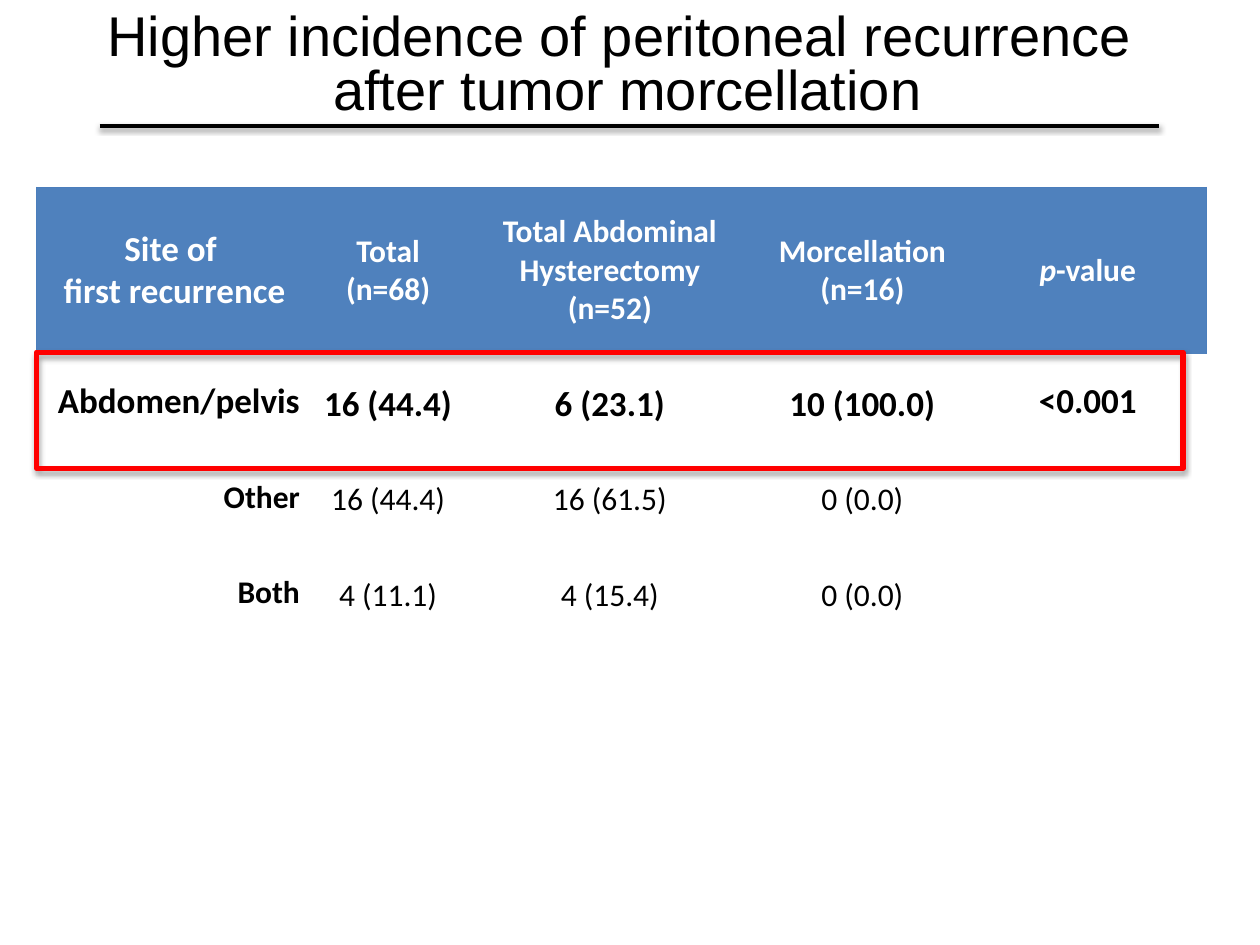
import pptx
import pptx.util
import pptx.dml.color
import pptx.enum.shapes
import pptx.enum.text
import pptx.oxml
import pptx.oxml.ns

Cm, Pt = pptx.util.Cm, pptx.util.Pt
ALIGN = pptx.enum.text.PP_ALIGN
MIDDLE = pptx.enum.text.MSO_ANCHOR.MIDDLE
COLORS = {"ink": "000000", "paper": "FFFFFF", "head": "4F81BD",
          "edge": "4B7EBC", "mark": "FF0000"}
PLAIN = "{2D5ABB26-0587-4C30-8999-92F81FD0307C}"
NS = pptx.oxml.ns.nsdecls("a")

HEAD = [["Site of ", "first recurrence"], ["Total (n=68)"],
        ["Total Abdominal Hysterectomy (n=52)"], ["Morcellation (n=16)"],
        ["p", "-value"]]
BODY = [["Abdomen/pelvis", "16 (44.4)", "6 (23.1)", "10 (100.0)", "<0.001"],
        ["Other", "16 (44.4)", "16 (61.5)", "0 (0.0)", ""],
        ["Both", "4 (11.1)", "4 (15.4)", "0 (0.0)", ""]]
COLS = [5.56, 3.05, 5.89, 4.29, 4.8]
ROWS = [3.35, 1.93, 1.93, 1.93]


def color(name):
    """Return the named colour."""
    return pptx.dml.color.RGBColor.from_string(COLORS[name])


def apply(item, values):
    """Set each attribute in values on item."""
    for key, value in values.items():
        setattr(item, key, value)


def write(para, text, tone, form):
    """Add a run of text to a paragraph."""
    run = para.add_run()
    run.text = text
    apply(run.font, form)
    run.font.color.rgb = color(tone)


def stroke(shape, tone, width, alpha, dist):
    """Give a shape its line and a soft shadow below it."""
    shape.line.color.rgb = color(tone)
    shape.line.width = Pt(width)
    shape._element.spPr.append(pptx.oxml.parse_xml(
        f'<a:effectLst {NS}><a:outerShdw blurRad="{Pt(3.1)}" dist="{Pt(dist)}" '
        f'dir="5400000" rotWithShape="0"><a:srgbClr val="{COLORS["ink"]}">'
        f'<a:alpha val="{alpha * 1000}"/></a:srgbClr></a:outerShdw></a:effectLst>'))


def border(cell, sides):
    """Draw thin borders on the given sides of a cell."""
    for side in sides:
        cell._tc.get_or_add_tcPr().append(pptx.oxml.parse_xml(
            f'<a:ln{side} {NS} w="{Pt(0.75)}"><a:solidFill>'
            f'<a:srgbClr val="{COLORS["edge"]}"/></a:solidFill></a:ln{side}>'))


def title(slide, left, top, width, height):
    """Place the two-line title and the rule below it."""
    frame = slide.shapes.add_textbox(Cm(left), Cm(top), Cm(width), Cm(height)).text_frame
    frame.word_wrap = True
    lines = ["Higher incidence of peritoneal recurrence ", "after tumor morcellation"]
    for index, text in enumerate(lines):
        para = frame.add_paragraph() if index else frame.paragraphs[0]
        apply(para, {"alignment": ALIGN.CENTER, "line_spacing": 0.8})
        props = para._p.get_or_add_pPr()
        props.set("marL", str(Cm(0.79)))
        props.set("indent", str(-Cm(0.79)))
        write(para, text, "ink", {"name": "Arial", "size": Pt(32)})
    base = Cm(top + height - 0.1)
    rule = slide.shapes.add_connector(
        pptx.enum.shapes.MSO_CONNECTOR.STRAIGHT,
        Cm(left + 1.27), base, Cm(left + width - 1.2), base)
    stroke(rule, "ink", 2, 38, 1.6)


def header(cells):
    """Fill the header row."""
    for index, (cell, parts) in enumerate(zip(cells, HEAD)):
        border(cell, ("L" if index == 0 else "") + ("R" if index == 4 else "") + "T")
        cell.fill.solid()
        cell.fill.fore_color.rgb = color("head")
        cell.vertical_anchor = MIDDLE
        frame = cell.text_frame
        form = {"name": "Calibri", "size": Pt(18 if index else 20), "bold": True}
        for order, text in enumerate(parts):
            split = order and index == 0
            para = frame.add_paragraph() if split else frame.paragraphs[0]
            para.alignment = ALIGN.CENTER
            write(para, text, "paper", {**form, "italic": text == "p"})


def record(cells, texts, strong):
    """Fill one body row."""
    for index, (cell, text) in enumerate(zip(cells, texts)):
        cell.fill.background()
        if not text:
            continue
        count = 0 < index < 4
        cell.vertical_anchor = MIDDLE
        para = cell.text_frame.paragraphs[0]
        para.alignment = ALIGN.CENTER if index else ALIGN.RIGHT
        if count:
            apply(cell, {"margin_left": Cm(0.18), "margin_right": Cm(0.18),
                         "margin_top": 0, "margin_bottom": 0})
            para.line_spacing = 1.15
        write(para, text, "ink", {"name": "Calibri", "size": Pt(20 if strong else 18),
                                  "bold": strong or not count})


def grid(slide, left, top):
    """Place the recurrence table and the frame around its first result."""
    table = slide.shapes.add_table(len(ROWS), len(COLS), Cm(left), Cm(top),
                                   Cm(sum(COLS)), Cm(sum(ROWS))).table
    apply(table, {"first_row": False, "horz_banding": False})
    table._tbl.tblPr.find(pptx.oxml.ns.qn("a:tableStyleId")).text = PLAIN
    for col, width in zip(table.columns, COLS):
        col.width = Cm(width)
    for row, height in zip(table.rows, ROWS):
        row.height = Cm(height)
    header(table.rows[0].cells)
    for index, texts in enumerate(BODY):
        record(table.rows[index + 1].cells, texts, index == 0)
    box = slide.shapes.add_shape(pptx.enum.shapes.MSO_SHAPE.RECTANGLE, Cm(left),
                                 Cm(top + ROWS[0] - 0.03), Cm(23.11), Cm(2.34))
    box.fill.background()
    stroke(box, "mark", 3, 35, 1.8)


def main():
    """Build and save the slide."""
    deck = pptx.Presentation()
    apply(deck, {"slide_width": Cm(25.4), "slide_height": Cm(19.05)})
    slide = deck.slides.add_slide(deck.slide_layouts[6])
    title(slide, 0.74, 0.15, 23.83, 2.49)
    grid(slide, 0.74, 3.78)
    deck.save("out.pptx")


if __name__ == "__main__":
    main()
